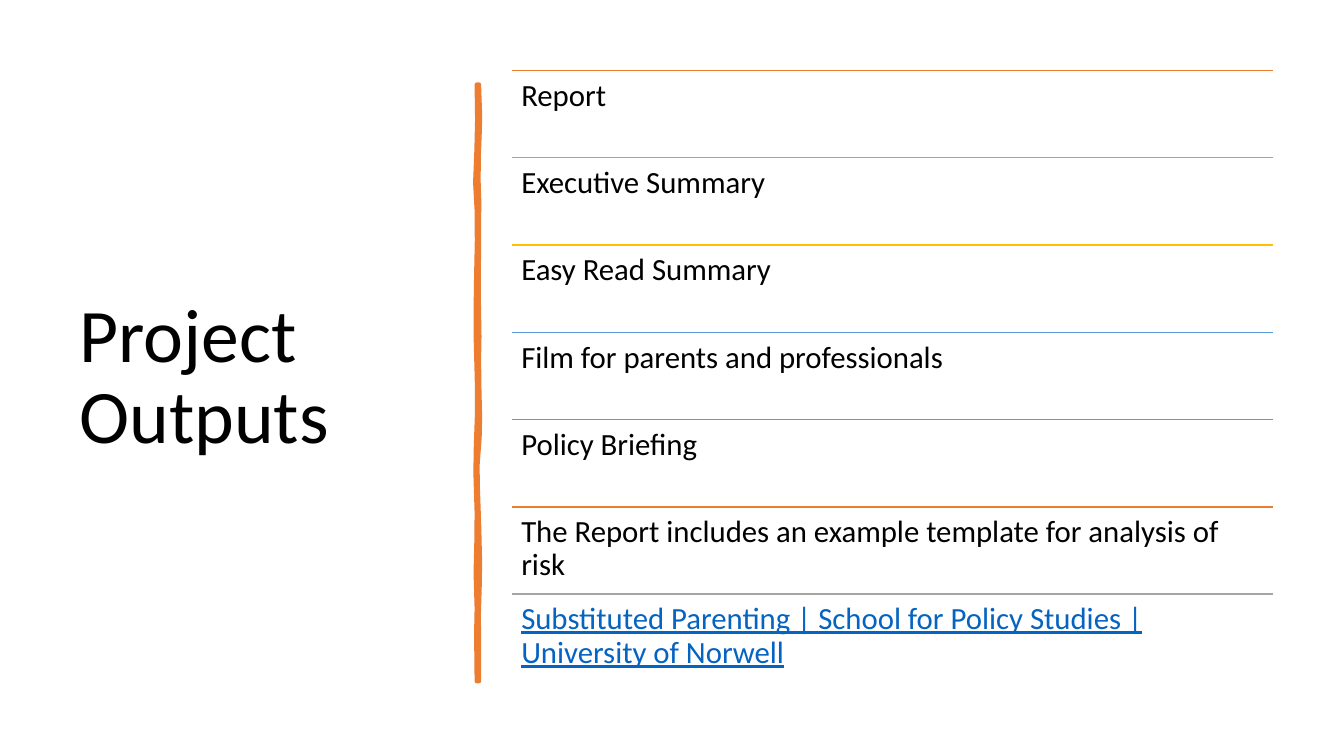
from dataclasses import dataclass

from lxml import etree
from pptx import Presentation
from pptx import util as u
from pptx.dml.color import RGBColor
from pptx.enum import shapes, text
from pptx.oxml.ns import qn


@dataclass(frozen=True)
class Theme:
    font: str = "Calibri"
    ink: str = "000000"
    link: str = "0563C1"
    brush: str = "ED7D31"
    rules: tuple = ("ED7D31", "A5A5A5", "FFC000", "5B9BD5", "70AD47")
    title_size: float = 54
    item_size: float = 22
    rule_width: float = 1
    brush_width: float = 3.25


THEME = Theme()
WIDTH, HEIGHT = 13.33, 7.5

OUTPUTS = [
    "Report",
    "Executive Summary",
    "Easy Read Summary",
    "Film for parents and professionals",
    "Policy Briefing",
    "The Report includes an example template for analysis of risk",
]
LINK = "Substituted Parenting | School for Policy Studies | University of Norwell"

BRUSH_UNIT = 0.001
BRUSH_RIGHT = [
    (40, 0), (50, 300), (48, 450), (38, 700), (35, 950), (42, 1150),
    (40, 1450), (37, 2100), (44, 2500), (40, 2720), (43, 3000), (50, 3300),
    (46, 3500), (25, 3780), (28, 4000), (42, 4400), (50, 4750), (46, 5000),
    (38, 5250), (40, 5600), (40, 5920),
]
BRUSH_LEFT = [
    (20, 5920), (15, 5450), (20, 5200), (10, 4850), (17, 4550), (20, 4250),
    (8, 3850), (12, 3600), (22, 3300), (22, 2950), (12, 2550), (10, 2250),
    (15, 1900), (22, 1550), (20, 1250), (5, 970), (18, 650), (25, 350),
    (20, 0),
]


def add_text(s, box, words, size, color, anchor, inset, underline=None):
    sp = s.shapes.add_textbox(*map(u.Inches, box))
    tf = sp.text_frame
    tf.word_wrap = True
    tf.vertical_anchor = anchor
    tf.margin_left = tf.margin_right = u.Inches(inset)
    tf.margin_top = tf.margin_bottom = u.Inches(inset)
    p = tf.paragraphs[0]
    p.line_spacing = 0.9
    r = p.add_run()
    r.text = words
    r.font.name = THEME.font
    r.font.size = u.Pt(size)
    r.font.color.rgb = RGBColor.from_string(color)
    r.font.underline = underline


def add_title(s, box):
    add_text(s, box, "Project Outputs", THEME.title_size, THEME.ink,
             text.MSO_ANCHOR.MIDDLE, 0.1)


def add_brush_stroke(s, left, top):
    outline = BRUSH_RIGHT + BRUSH_LEFT
    fb = s.shapes.build_freeform(*outline[0], scale=u.Inches(BRUSH_UNIT))
    fb.add_line_segments(outline[1:], close=True)
    sp = fb.convert_to_shape(u.Inches(left), u.Inches(top))
    sp.shadow.inherit = False
    color = RGBColor.from_string(THEME.brush)
    sp.fill.solid()
    sp.fill.fore_color.rgb = color
    sp.line.color.rgb = color
    sp.line.width = u.Pt(THEME.brush_width)
    etree.SubElement(sp._element.spPr.find(qn("a:ln")), qn("a:round"))


def add_rule(s, left, top, width, color):
    cx = s.shapes.add_connector(
        shapes.MSO_CONNECTOR.STRAIGHT,
        *map(u.Inches, (left, top, left + width, top)))
    cx.line.color.rgb = RGBColor.from_string(color)
    cx.line.width = u.Pt(THEME.rule_width)
    etree.SubElement(cx._element.spPr, qn("a:effectLst"))


def add_output_list(s, box):
    left, top, width, height = box
    items = [(words, THEME.ink, None) for words in OUTPUTS]
    items.append((LINK, THEME.link, True))
    row = height / len(items)
    for i, (words, color, underline) in enumerate(items):
        y = top + i * row
        add_rule(s, left, y, width, THEME.rules[i % len(THEME.rules)])
        add_text(s, (left, y, width, row), words, THEME.item_size, color,
                 text.MSO_ANCHOR.TOP, 0.09, underline)


def main():
    prs = Presentation()
    prs.slide_width, prs.slide_height = u.Inches(WIDTH), u.Inches(HEIGHT)
    s = prs.slides.add_slide(prs.slide_layouts[6])
    add_title(s, (0.69, 0.7, 3.74, 6.11))
    add_brush_stroke(s, 4.71, 0.84)
    add_output_list(s, (5.08, 0.7, 7.55, 6.06))
    prs.save("out.pptx")


if __name__ == "__main__":
    main()
